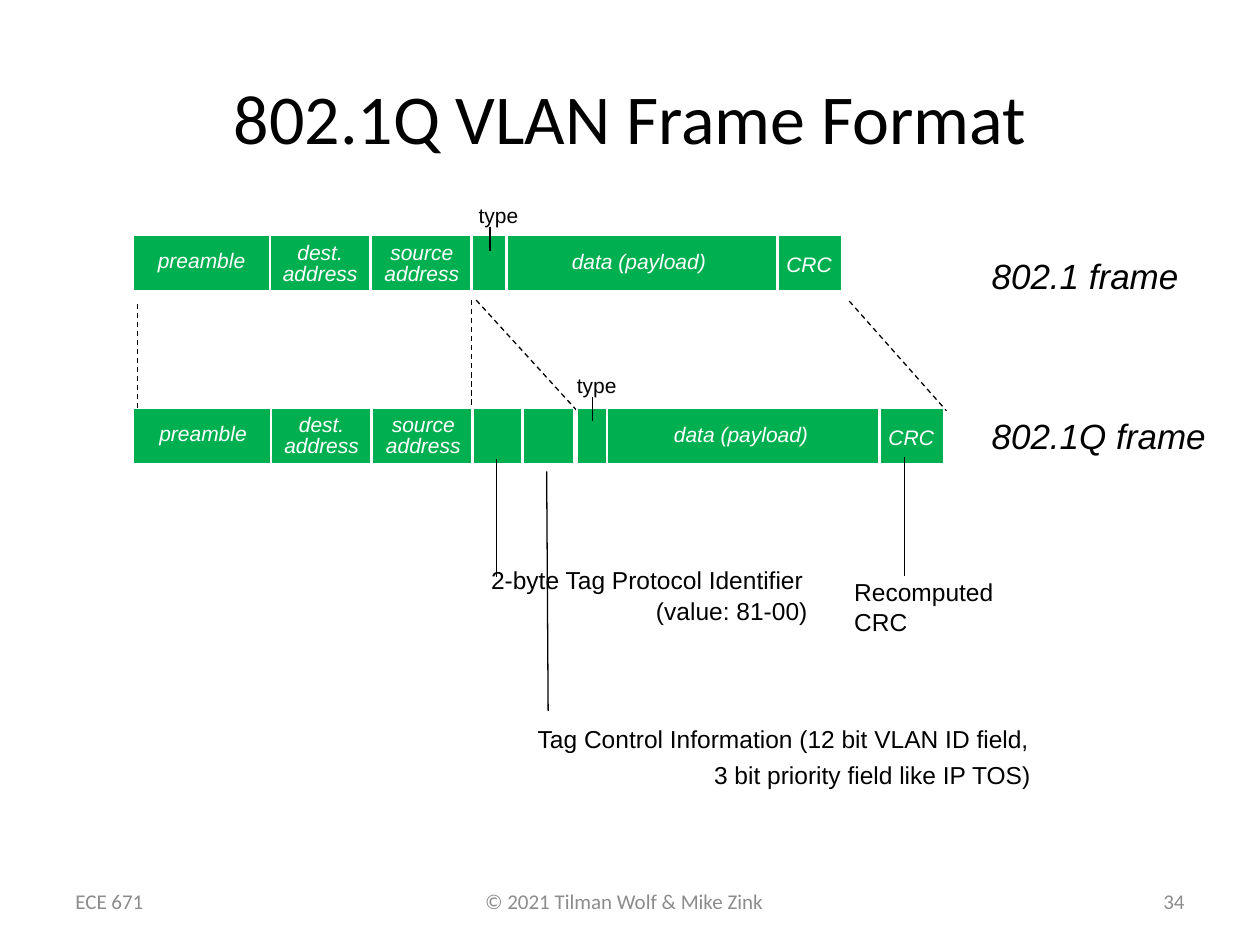
from lxml import etree
from pptx import Presentation
from pptx import util as u
from pptx.dml.color import RGBColor
from pptx.enum import dml, shapes, text
from pptx.oxml.ns import qn

BLACK = RGBColor(0x00, 0x00, 0x00)
WHITE = RGBColor(0xFF, 0xFF, 0xFF)
GREEN = RGBColor(0x00, 0xB0, 0x50)
GREY = RGBColor(0x8C, 0x8C, 0x8C)
LEFT, MID, RIGHT = text.PP_ALIGN.LEFT, text.PP_ALIGN.CENTER, text.PP_ALIGN.RIGHT

prs = Presentation()
prs.slide_width, prs.slide_height = u.Cm(25.4), u.Cm(19.05)
slide = prs.slides.add_slide(prs.slide_layouts[6])


def put(words, x, y, w, h, size=12, font="Arial", color=BLACK, italic=False,
        align=LEFT, last=None, lead=None, gap=0, middle=False, wrap=False):
    """Add a text box; last aligns the final line, gap is space before it."""
    box = slide.shapes.add_textbox(u.Cm(x), u.Cm(y), u.Cm(w), u.Cm(h))
    frame = box.text_frame
    frame.word_wrap = wrap
    frame.vertical_anchor = text.MSO_ANCHOR.MIDDLE if middle else text.MSO_ANCHOR.TOP
    frame.text = words
    for para in frame.paragraphs:
        para.alignment = align
        para.line_spacing = lead
        style = para.font
        style.size, style.name, style.italic = u.Pt(size), font, italic
        style.color.rgb = color
    if last is not None:
        para.alignment = last
    if gap:
        para.space_before = u.Pt(gap)


def rule(x1, y1, x2, y2, color=BLACK, width=0.75, dash=False):
    line = slide.shapes.add_connector(
        shapes.MSO_CONNECTOR.STRAIGHT, u.Cm(x1), u.Cm(y1), u.Cm(x2), u.Cm(y2))
    line.line.color.rgb = color
    line.line.width = u.Pt(width)
    if dash:
        line.line.dash_style = dml.MSO_LINE.DASH
    etree.SubElement(line._element.spPr, qn("a:effectLst"))


# Title and footer
put("802.1Q VLAN Frame Format", 1.27, 0.76, 22.86, 3.18, size=40,
    font="Calibri", align=MID, middle=True, wrap=True)
foot = dict(font="Calibri", color=GREY)
put("© 2021 Tilman Wolf & Mike Zink", 9.53, 17.78, 6.2, 1.27, **foot)
put("ECE 671", 1.27, 17.65, 5.92, 1.02, middle=True, wrap=True, **foot)
put("34", 18.21, 17.65, 5.92, 1.02, align=RIGHT, middle=True, wrap=True, **foot)

# Dashed lines from the plain frame to the tagged one
for ends in [(2.77, 6.12, 2.77, 8.26), (9.5, 6.05, 9.5, 8.18),
             (9.6, 6.05, 11.66, 8.31), (17.12, 6.07, 19.08, 8.28)]:
    rule(*ends, dash=True)

# Frame bars: left, top, width
for x, y, w in [(2.69, 4.75, 14.27), (2.69, 8.23, 6.81),
                (11.63, 8.23, 7.39), (9.53, 8.23, 2.03)]:
    bar = slide.shapes.add_shape(
        shapes.MSO_SHAPE.RECTANGLE, u.Cm(x), u.Cm(y), u.Cm(w), u.Cm(1.12))
    bar.shadow.inherit = False
    bar.fill.solid()
    bar.fill.fore_color.rgb = GREEN
    bar.line.color.rgb = WHITE
    bar.line.width = u.Pt(0.75)

# White rules between the fields
for y, cuts in [(4.72, (5.44, 7.47, 9.5, 10.21, 15.67)),
                (8.2, (5.46, 7.49, 9.53, 10.54, 12.24, 17.73))]:
    for x in cuts:
        rule(x, y, x, y + 1.19, color=WHITE, width=1.5)

# Field names: the second frame's tail moves right by the tag's width
fields = [("preamble", 2.92, 4.95, 2.29, 0.69, 0.03),
          ("dest.\naddress", 5.44, 4.78, 2.03, 1.12, 0.03),
          ("source\naddress", 7.49, 4.78, 2.03, 1.12, 0.03),
          ("data (payload)", 11.23, 4.98, 3.3, 0.69, 2.06),
          ("CRC", 15.6, 5.03, 1.42, 0.69, 2.06)]
for row in range(2):
    for name, x, y, w, h, move in fields:
        put(name, x + row * move, y + row * 3.48, w, h, color=WHITE,
            italic=True, align=MID, lead=u.Pt(12))

# Type marks
for x, y, tick in [(9.4, 3.96, 9.88), (11.38, 7.39, 11.94)]:
    put("type", x, y, 1.32, 0.76)
    rule(tick, y + 0.61, tick, y + 1.09)

# Frame names
put("802.1 frame", 19.74, 5, 4.32, 1.12, size=20, italic=True)
put("802.1Q frame", 19.74, 8.23, 4.85, 1.12, size=20, italic=True)

# Notes and their leader lines
rule(10.01, 9.25, 10.01, 11.63)
rule(11.02, 9.5, 11.05, 14.33)
rule(18.24, 9.22, 18.24, 11.61)
put("2-byte Tag Protocol Identifier\n(value: 81-00)", 9.65, 11.28, 6.88, 1.45,
    size=14, last=RIGHT, gap=1, middle=True, wrap=True)
put("Tag Control Information (12 bit VLAN ID field,\n"
    "3 bit priority field like IP TOS)", 10.59, 14.45, 10.44, 1.6,
    size=14, last=RIGHT, gap=4, middle=True, wrap=True)
put("Recomputed\nCRC", 16.97, 11.61, 3.43, 1.35, size=14, lead=0.8, gap=3.5,
    middle=True)

prs.save("out.pptx")
